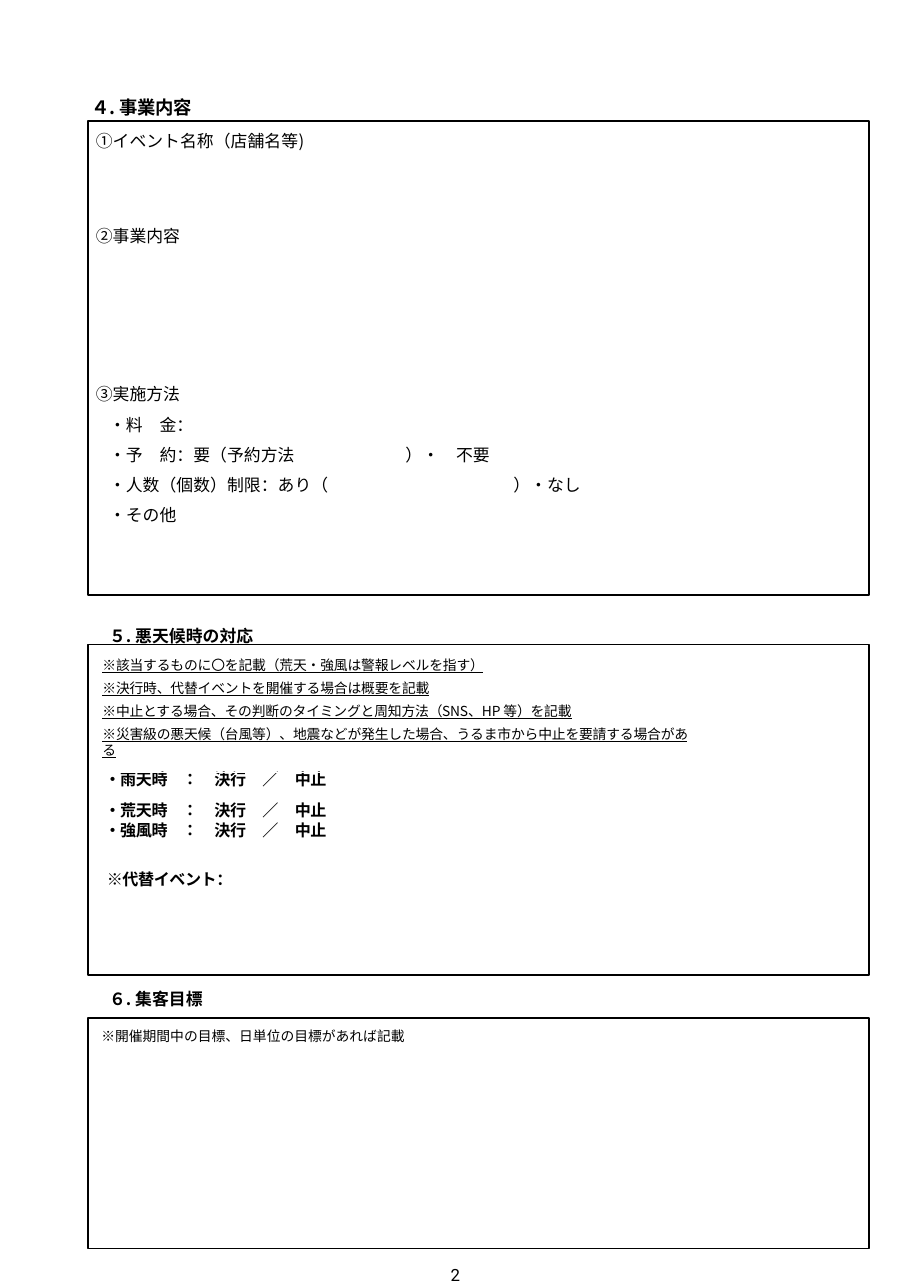
from dataclasses import dataclass

from lxml import etree
from pptx import Presentation
from pptx.dml.color import RGBColor
from pptx.enum.shapes import MSO_SHAPE
from pptx.enum.text import MSO_ANCHOR, PP_ALIGN
from pptx.oxml.ns import qn
from pptx.util import Inches, Pt

RECTANGLE = MSO_SHAPE.RECTANGLE
TOP = MSO_ANCHOR.TOP
LEFT, CENTER = PP_ALIGN.LEFT, PP_ALIGN.CENTER


@dataclass(frozen=True)
class TextStyle:
    size: float
    bold: bool = False
    underline: bool = False
    spacing: float = 0
    font: str = "Noto Sans CJK JP"


@dataclass(frozen=True)
class Theme:
    ink: RGBColor = RGBColor(0, 0, 0)
    frame_width: float = 1
    line_height: float = 1.2
    title: TextStyle = TextStyle(12, bold=True, spacing=-0.2)
    heading: TextStyle = TextStyle(11, bold=True)
    body: TextStyle = TextStyle(11)
    rule: TextStyle = TextStyle(9, underline=True, spacing=-0.1)
    note: TextStyle = TextStyle(9)
    choice: TextStyle = TextStyle(10.5, bold=True, spacing=-0.2)
    page_number: TextStyle = TextStyle(11, font="Roboto")


THEME = Theme()

FRAME_LEFT, FRAME_WIDTH = 0.8, 7.09
FRAMES = [(1.1, 4.3), (5.85, 3), (9.24, 2.09)]

HEADINGS = [
    (0.83, 0.87, "４. 事業内容", THEME.title),
    (0.99, 5.68, "５. 悪天候時の対応", THEME.heading),
    (0.99, 8.97, "６. 集客目標", THEME.heading),
]

CONTENT_ITEMS = [
    ("①イベント名称（店舗名等)", 0),
    ("②事業内容", 48.9),
    ("③実施方法", 90),
]

METHOD_LINES = [
    ("・料　金：", None),
    ("・予　約：要（予約方法\t）・　不要", 2.69),
    ("・人数（個数）制限：あり（\t）・なし", 3.67),
    ("・その他", None),
]

WEATHER_RULES = [
    "※該当するものに〇を記載（荒天・強風は警報レベルを指す）",
    "※決行時、代替イベントを開催する場合は概要を記載",
    "※中止とする場合、その判断のタイミングと周知方法（SNS、HP 等）を記載",
    "※災害級の悪天候（台風等）、地震などが発生した場合、うるま市から中止を要請する場合がある",
]

CHOICE_COLUMNS = [0.69, 0.29, 0.44, 0.29, 0.4]
CHOICE_ROWS = [("・雨天時", 0.2, 0), ("・荒天時", 0.24, 0.08), ("・強風時", 0.2, 0.03)]
CHOICE_CELLS = ["：", "決行", "／", "中止"]
LAST_COLUMN_INDENT = 0.04


def set_attributes(target, values):
    for name, value in values.items():
        setattr(target, name, value)


def set_margins(target, left=0, top=0):
    set_attributes(target, {
        "margin_left": Inches(left), "margin_top": Inches(top),
        "margin_right": 0, "margin_bottom": 0,
    })


def write_paragraph(para, text, style, before=0, align=LEFT, line_height=None):
    set_attributes(para, {
        "alignment": align,
        "space_before": Pt(before),
        "line_spacing": Pt(line_height or style.size * THEME.line_height),
    })
    span = para.add_run()
    span.text = text
    set_attributes(span.font, {
        "name": style.font, "size": Pt(style.size),
        "bold": style.bold, "underline": style.underline,
    })
    span.font.color.rgb = THEME.ink
    properties = span.font._element
    properties.set("spc", str(round(style.spacing * 100)))
    east_asian = etree.SubElement(properties, qn("a:ea"))
    east_asian.set("typeface", style.font)


def add_tab_stop(para, position):
    tabs = etree.SubElement(para._p.get_or_add_pPr(), qn("a:tabLst"))
    tab = etree.SubElement(tabs, qn("a:tab"))
    tab.set("pos", str(Inches(position)))
    tab.set("algn", "l")


def add_text(page, left, top, width, height, lines, style):
    """Add a text box from (text, space before) pairs and return its paragraphs."""
    box = page.shapes.add_textbox(
        Inches(left), Inches(top), Inches(width), Inches(height))
    frame = box.text_frame
    frame.word_wrap = True
    set_margins(frame)
    for index, (text, before) in enumerate(lines):
        para = frame.add_paragraph() if index else frame.paragraphs[0]
        write_paragraph(para, text, style, before)
    return frame.paragraphs


def add_method_lines(page):
    lines = [(text, 6.5 if index else 0)
             for index, (text, _) in enumerate(METHOD_LINES)]
    paragraphs = add_text(page, 0.99, 3.76, 6.8, 1.1, lines, THEME.body)
    for para, (_, gap_end) in zip(paragraphs, METHOD_LINES):
        if gap_end:
            add_tab_stop(para, gap_end)


def add_choice_table(page):
    height = sum(row_height for _, row_height, _ in CHOICE_ROWS)
    table = page.shapes.add_table(
        len(CHOICE_ROWS), len(CHOICE_COLUMNS), Inches(0.89), Inches(7.01),
        Inches(sum(CHOICE_COLUMNS)), Inches(height)).table
    set_attributes(table, {"first_row": False, "horz_banding": False})
    for column, width in zip(table.columns, CHOICE_COLUMNS):
        column.width = Inches(width)
    for row, (label, row_height, inset) in zip(table.rows, CHOICE_ROWS):
        row.height = Inches(row_height)
        for index, text in enumerate([label] + CHOICE_CELLS):
            cell = row.cells[index]
            last = index == len(CHOICE_CELLS)
            set_margins(cell, LAST_COLUMN_INDENT if last else 0, inset)
            cell.vertical_anchor = TOP
            cell.fill.background()
            write_paragraph(cell.text_frame.paragraphs[0], text, THEME.choice,
                            align=CENTER, line_height=11.4)


def add_frame(page, top, height):
    frame = page.shapes.add_shape(
        RECTANGLE, Inches(FRAME_LEFT), Inches(top),
        Inches(FRAME_WIDTH), Inches(height))
    frame.shadow.inherit = False
    frame.fill.background()
    frame.line.color.rgb = THEME.ink
    frame.line.width = Pt(THEME.frame_width)


def main():
    deck = Presentation()
    deck.slide_width, deck.slide_height = Inches(8.26), Inches(11.69)
    page = deck.slides.add_slide(deck.slide_layouts[6])

    for left, top, text, style in HEADINGS:
        add_text(page, left, top, 4, 0.2, [(text, 0)], style)
    add_text(page, 0.87, 1.19, 6.9, 2.48, CONTENT_ITEMS, THEME.body)
    add_method_lines(page)

    rules = [(text, 4.2 if index else 0)
             for index, text in enumerate(WEATHER_RULES)]
    add_text(page, 0.93, 5.96, 5.4, 0.93, rules, THEME.rule)
    add_choice_table(page)
    add_text(page, 0.97, 7.89, 1.3, 0.18, [("※代替イベント：", 0)], THEME.choice)
    add_text(page, 4.09, 11.48, 0.18, 0.2, [("2", 0)], THEME.page_number)

    for top, height in FRAMES:
        add_frame(page, top, height)
    add_text(page, 0.92, 9.33, 4.03, 0.15,
             [("※開催期間中の目標、日単位の目標があれば記載", 0)], THEME.note)

    deck.save("out.pptx")


if __name__ == "__main__":
    main()
